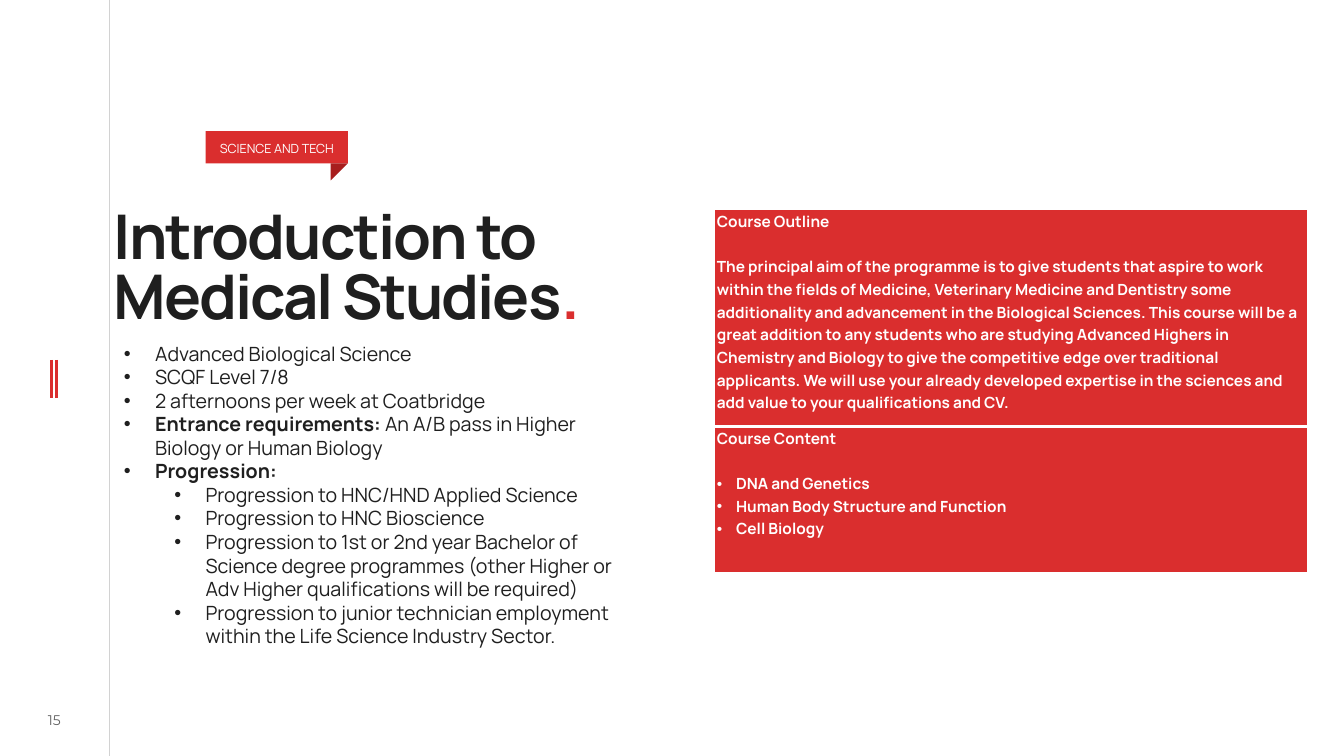
from pptx import Presentation
from pptx.dml.color import RGBColor
from pptx.enum.shapes import MSO_CONNECTOR, MSO_SHAPE
from pptx.enum.text import MSO_ANCHOR, PP_ALIGN
from pptx.oxml.ns import qn
from pptx.util import Inches, Pt
from lxml import etree

RED = RGBColor(0xDA, 0x2E, 0x2E)
DARK_RED = RGBColor(0xA8, 0x1E, 0x1E)
INK = RGBColor(0x1F, 0x1F, 0x1F)
GRAY = RGBColor(0x62, 0x62, 0x62)
PALE = RGBColor(0xD2, 0xD2, 0xD2)
WHITE = RGBColor(0xFF, 0xFF, 0xFF)
LINE = MSO_CONNECTOR.STRAIGHT
RECT, CORNER = MSO_SHAPE.RECTANGLE, MSO_SHAPE.RIGHT_TRIANGLE
MIDDLE, CENTER = MSO_ANCHOR.MIDDLE, PP_ALIGN.CENTER


def write(para, text, color, **style):
    run = para.add_run()
    run.text = text
    run.font.color.rgb = color
    for name, value in ({"name": "Manrope"} | style).items():
        setattr(run.font, name, value)
    return run


def bullet(para, left, hang):
    props = para._p.get_or_add_pPr()
    props.set("marL", str(Inches(left)))
    props.set("indent", str(-Inches(hang)))
    font = etree.SubElement(props, qn("a:buFont"))
    font.set("typeface", "Arial")
    etree.SubElement(props, qn("a:buChar")).set("char", "•")


deck = Presentation()
deck.slide_width, deck.slide_height = Inches(13.33), Inches(7.5)
slide = deck.slides.add_slide(deck.slide_layouts[6])
shapes = slide.shapes

# Margin rule and twin red marks
for x, top, end, color, width in [
    (1.08, 0, 7.5, PALE, 0.5),
    (0.51, 3.57, 3.95, RED, 2),
    (0.56, 3.57, 3.95, RED, 2),
]:
    rule = shapes.add_connector(LINE, Inches(x), Inches(top), Inches(x), Inches(end))
    rule.line.color.rgb = color
    rule.line.width = Pt(width)
    etree.SubElement(rule._element.spPr, qn("a:effectLst"))

# Text boxes: page number, title, course facts
frames = []
for box, insets, anchor in [
    ((0.26, 7.02, 0.56, 0.25), (0, 0, 0, 0), MIDDLE),
    ((1.13, 1.9, 5.56, 1.77), (0, 0.21, 0, 0), MSO_ANCHOR.TOP),
    ((1.13, 3.34, 5.19, 3.87), (0.1, 0.05, 0.1, 0.05), MSO_ANCHOR.TOP),
]:
    frame = shapes.add_textbox(*map(Inches, box)).text_frame
    frame.word_wrap = True
    frame.vertical_anchor = anchor
    for side, inset in zip(("left", "top", "right", "bottom"), insets):
        setattr(frame, f"margin_{side}", Inches(inset))
    frames.append(frame)
page, title, facts = frames

page.paragraphs[0].alignment = CENTER
write(page.paragraphs[0], "15", GRAY, name="Montserrat", size=Pt(10))

head = title.paragraphs[0]
head.line_spacing = 0.8
for text, color in [("Introduction to Medical Studies", INK), (".", RED)]:
    run = write(head, text, color, size=Pt(44), bold=True)
    run.font._element.set("spc", "-150")

# Each fact: level, bold part, plain part
items = [
    (0, "", "Advanced Biological Science"),
    (0, "", "SCQF Level 7/8"),
    (0, "", "2 afternoons per week at Coatbridge"),
    (0, "Entrance requirements: ", "An A/B pass in Higher Biology or Human Biology"),
    (0, "Progression:", ""),
    (1, "", "Progression to HNC/HND Applied Science"),
    (1, "", "Progression to HNC Bioscience"),
    (1, "", "Progression to 1st or 2nd year Bachelor of Science degree programmes "
            "(other Higher or Adv Higher qualifications will be required)"),
    (1, "", "Progression to junior technician employment within the "
            "Life Science Industry Sector."),
]
for i, (level, strong, plain) in enumerate(items):
    para = facts.add_paragraph() if i else facts.paragraphs[0]
    para.level = level
    bullet(para, 0.31 + 0.5 * level, 0.31)
    for text, bold in [(strong, True), (plain, False)]:
        if text:
            write(para, text, INK, size=Pt(14), bold=bold)

# Subject tag with folded corner
tag = shapes.add_shape(RECT, Inches(2.04), Inches(1.3), Inches(1.41), Inches(0.32))
fold = shapes.add_shape(CORNER, Inches(3.28), Inches(1.62), Inches(0.17), Inches(0.17))
fold.rotation = 90
for shape, color in [(tag, RED), (fold, DARK_RED)]:
    shape.shadow.inherit = False
    shape.fill.solid()
    shape.fill.fore_color.rgb = color
    shape.line.fill.background()
label = tag.text_frame
label.margin_left = label.margin_right = 0
label.margin_top, label.margin_bottom = Inches(0.07), Inches(0.05)
label.vertical_anchor = MIDDLE
label.paragraphs[0].alignment = CENTER
write(label.paragraphs[0], "SCIENCE AND TECH", WHITE, size=Pt(9))

# Course table: heading, lines, bulleted or not, bottom border
parts = [
    ("Course Outline", [
        "The principal aim of the programme is to give students that aspire to work "
        "within the fields of Medicine, Veterinary Medicine and Dentistry some "
        "additionality and advancement in the Biological Sciences. This course will "
        "be a great addition to any students who are studying Advanced Highers in "
        "Chemistry and Biology to give the competitive edge over traditional "
        "applicants. We will use your already developed expertise in the sciences "
        "and add value to your qualifications and CV."], False, 3),
    ("Course Content", ["DNA and Genetics", "Human Body Structure and Function",
                        "Cell Biology"], True, 1),
]
table = shapes.add_table(2, 1, Inches(7.09), Inches(2.08), Inches(5.88), Inches(3.6)).table
for row, height, (name, lines, listed, base) in zip(table.rows, (2.15, 1.45), parts):
    row.height = Inches(height)
    cell = row.cells[0]
    cell.margin_left = cell.margin_right = Inches(0.02)
    cell.margin_top = cell.margin_bottom = 0
    for i, text in enumerate([name, *lines]):
        para = cell.text_frame.paragraphs[0] if i == 0 else cell.text_frame.add_paragraph()
        para.line_spacing = 1.07
        if i == 0:
            para.space_after = Pt(16.2)
        elif listed:
            bullet(para, 0.19, 0.19)
        write(para, text, WHITE, size=Pt(11), bold=True)
    props = cell._tc.get_or_add_tcPr()
    for edge, width in [("L", 1), ("R", 1), ("T", 1), ("B", base)]:
        border = etree.SubElement(props, qn(f"a:ln{edge}"), w=str(Pt(width)))
        paint = etree.SubElement(border, qn("a:solidFill"))
        etree.SubElement(paint, qn("a:srgbClr"), val=str(WHITE))
    cell.fill.solid()
    cell.fill.fore_color.rgb = RED

deck.save("out.pptx")
